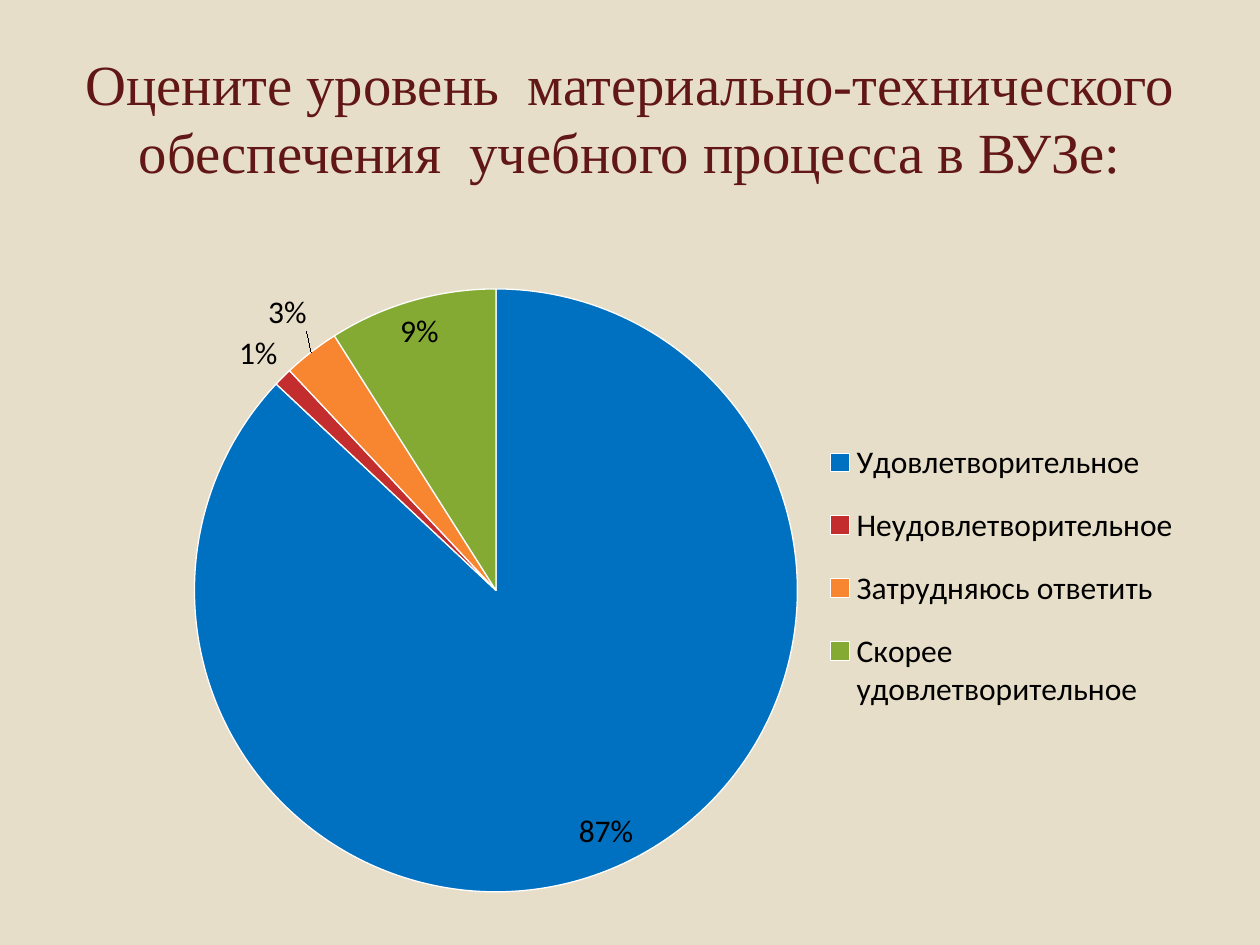
from lxml import etree
from pptx import Presentation
from pptx.chart.data import CategoryChartData
from pptx.dml.color import RGBColor
from pptx.enum.chart import XL_CHART_TYPE, XL_LABEL_POSITION, XL_LEGEND_POSITION
from pptx.enum.text import MSO_ANCHOR, PP_ALIGN
from pptx.oxml.ns import qn
from pptx.util import Pt

EMU_PER_PX = 914400 // 126
PIE = XL_CHART_TYPE.PIE
BEST_FIT = XL_LABEL_POSITION.BEST_FIT
RIGHT = XL_LEGEND_POSITION.RIGHT
MIDDLE = MSO_ANCHOR.MIDDLE
CENTER = PP_ALIGN.CENTER

TITLE = "Оцените уровень  материально-технического обеспечения  учебного процесса в ВУЗе:"
ANSWERS = [
    ("Удовлетворительное", 87, "0070C0"),
    ("Неудовлетворительное", 1, "C32D2E"),
    ("Затрудняюсь ответить", 3, "F88631"),
    ("Скорее удовлетворительное", 9, "84AA33"),
]
RAISED_LABEL = 2


def px(length):
    return length * EMU_PER_PX


def color(value):
    return RGBColor.from_string(value)


def format_font(font, name, size, value):
    font.name = name
    font.size = Pt(size)
    font.color.rgb = color(value)


def place_title(slide, text, left, top, width, height):
    title = slide.shapes.title
    title.left, title.top, title.width, title.height = map(px, (left, top, width, height))
    title.text_frame.text = text
    title.text_frame.word_wrap = True
    title.text_frame.vertical_anchor = MIDDLE
    paragraph = title.text_frame.paragraphs[0]
    paragraph.alignment = CENTER
    format_font(paragraph.runs[0].font, "Times New Roman", 32.4, "621717")


def manual_layout(target=None, **values):
    layout = etree.Element(qn("c:layout"))
    manual = etree.SubElement(layout, qn("c:manualLayout"))
    if target:
        etree.SubElement(manual, qn("c:layoutTarget"), val=target)
        etree.SubElement(manual, qn("c:xMode"), val="edge")
        etree.SubElement(manual, qn("c:yMode"), val="edge")
    for name, value in values.items():
        etree.SubElement(manual, qn(f"c:{name}"), val=str(value))
    return layout


def replace_layout(parent, layout, index):
    for existing in parent.findall(qn("c:layout")):
        parent.remove(existing)
    parent.insert(index, layout)


def add_labels(series):
    labels = series.data_labels
    labels.show_value = False
    labels.show_percentage = True
    labels.number_format = "0%"
    labels.number_format_is_linked = False
    labels.position = BEST_FIT
    format_font(labels.font, "Calibri", 18, "000000")
    raised = series.points[RAISED_LABEL].data_label
    format_font(raised.font, "Calibri", 18, "000000")
    raised.position = BEST_FIT
    element = series._element.find(f"{qn('c:dLbls')}/{qn('c:dLbl')}")
    element.find(qn("c:showVal")).set("val", "0")
    element.find(qn("c:showPercent")).set("val", "1")
    replace_layout(element, manual_layout(x=0, y=-0.02), 1)


def add_pie(slide, answers, left, top, width, height):
    data = CategoryChartData()
    data.categories = [name for name, _, _ in answers]
    data.add_series("Series 1", [value for _, value, _ in answers])
    chart = slide.shapes.add_chart(PIE, *map(px, (left, top, width, height)), data).chart
    chart.has_title = False
    format_font(chart.font, "Calibri", 18, "000000")
    chart.has_legend = True
    chart.legend.position = RIGHT
    chart.legend.include_in_layout = False
    chart.plots[0].vary_by_categories = True
    series = chart.plots[0].series[0]
    for index, (_, _, fill) in enumerate(answers):
        point = series.points[index].format
        point.fill.solid()
        point.fill.fore_color.rgb = color(fill)
        point.line.color.rgb = color("FFFFFF")
        point.line.width = Pt(0.75)
    add_labels(series)
    plot_area = chart._chartSpace.chart.plotArea
    replace_layout(plot_area, manual_layout("inner", x=0.02, y=0.1, w=0.59, h=0.83), 0)
    legend_layout = manual_layout("outer", x=0.63, y=0.28, w=0.36, h=0.43)
    legend_layout[0].remove(legend_layout[0][0])
    replace_layout(chart.legend._element, legend_layout, 1)


def main():
    presentation = Presentation()
    presentation.slide_width = px(1260)
    presentation.slide_height = px(945)
    slide = presentation.slides.add_slide(presentation.slide_layouts[5])
    slide.background.fill.solid()
    slide.background.fill.fore_color.rgb = color("E7DEC9")
    place_title(slide, TITLE, 63, 38, 1134, 158)
    add_pie(slide, ANSWERS, 174, 214, 1022, 731)
    presentation.save("out.pptx")


if __name__ == "__main__":
    main()
